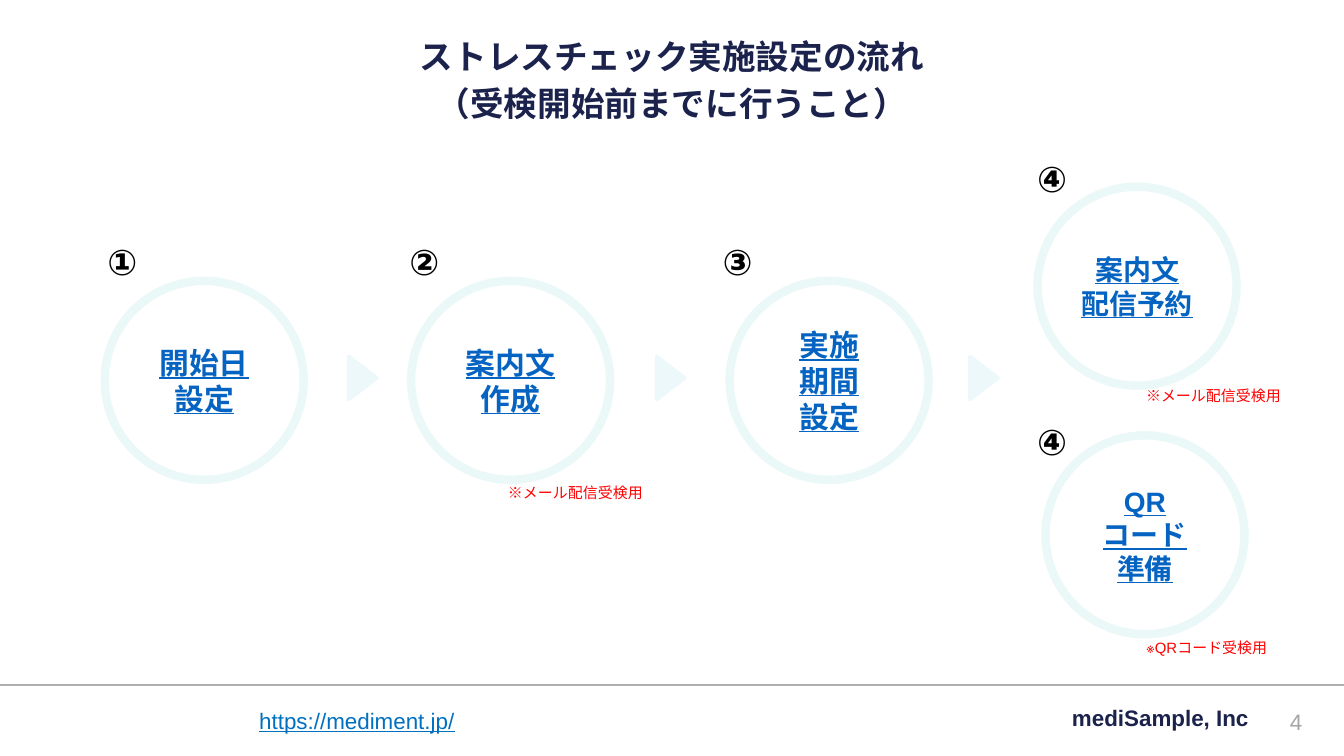
from dataclasses import dataclass

from lxml.etree import SubElement
from pptx import Presentation
from pptx.dml.color import RGBColor
from pptx.enum.shapes import MSO_CONNECTOR, MSO_SHAPE
from pptx.enum.text import MSO_ANCHOR, PP_ALIGN
from pptx.oxml.ns import qn
from pptx.util import Cm, Pt

FONT = "Arial"
NAVY, BLUE, RED = "1B224C", "0563C1", "FF0000"
RING, ARROW = "EBF8F8", "EDF8FA"
DIAMETER = 3.76


@dataclass
class Step:
    number: str
    text: str
    left: float
    top: float
    number_left: float
    number_top: float
    size: int = 16
    grouped: bool = True


@dataclass
class Label:
    text: str
    left: float
    top: float
    width: float
    height: float
    size: int
    color: str
    bold: bool = False
    underline: bool = False
    align: PP_ALIGN = PP_ALIGN.LEFT
    anchor: MSO_ANCHOR = MSO_ANCHOR.TOP
    inset: float = 0.1
    wrap: bool = True


STEPS = [
    Step("①", "開始日\n設定", 1.98, 5.31, 1.78, 4.29),
    Step("②", "案内文\n作成", 7.77, 5.31, 7.49, 4.29),
    Step("③", "実施\n期間\n設定", 13.79, 5.31, 13.41, 4.29),
    Step("④", "案内文\n配信予約", 19.61, 3.53, 19.35, 2.72, 15, False),
    Step("④", "QR\nコード\n準備", 19.76, 8.23, 19.35, 7.7, 15, False),
]

NOTES = [
    ("※メール配信受検用", 9.35, 8.97, 3.3),
    ("※メール配信受検用", 21.41, 7.14, 3.1),
    ("※QRコード受検用", 21.41, 11.91, 2.92),
]

TITLE = Label("ストレスチェック実施設定の流れ\n（受検開始前までに行うこと）", 1.7, 1.17, 22, 0.76,
              18, NAVY, bold=True, align=PP_ALIGN.CENTER, anchor=MSO_ANCHOR.MIDDLE)

FOOTER = [
    Label("mediSample, Inc", 17.7, 13.18, 6, 0.76, 12, NAVY, bold=True,
          align=PP_ALIGN.RIGHT, anchor=MSO_ANCHOR.MIDDLE),
    Label("https://mediment.jp/", 4.8, 13.26, 5.21, 0.71, 12, "0070C0", underline=True),
    Label("4", 24, 13.26, 0.99, 0.76, 12, "A5A5A5",
          align=PP_ALIGN.CENTER, anchor=MSO_ANCHOR.MIDDLE),
]


def rgb(value: str) -> RGBColor:
    return RGBColor.from_string(value)


def format_text(tf, size: int, color: str, bold: bool, underline: bool, align: PP_ALIGN) -> None:
    for p in tf.paragraphs:
        p.alignment = align
        for r in p.runs:
            r.font.size = Pt(size)
            r.font.bold = bold
            r.font.underline = underline
            r.font.color.rgb = rgb(color)
            r.font.name = FONT
            SubElement(r.font._element, qn("a:ea")).set("typeface", FONT)


def add_label(shapes, label: Label):
    sp = shapes.add_textbox(Cm(label.left), Cm(label.top), Cm(label.width), Cm(label.height))
    tf = sp.text_frame
    tf.word_wrap = label.wrap
    tf.vertical_anchor = label.anchor
    tf.margin_left = tf.margin_right = tf.margin_top = tf.margin_bottom = Cm(label.inset)
    tf.text = label.text
    format_text(tf, label.size, label.color, label.bold, label.underline, label.align)
    return tf


def add_preset(shapes, kind: MSO_SHAPE, left: float, top: float, width: float, height: float,
               fill: str, line: str, weight: float):
    sp = shapes.add_shape(kind, Cm(left), Cm(top), Cm(width), Cm(height))
    sp.shadow.inherit = False
    sp.fill.solid()
    sp.fill.fore_color.rgb = rgb(fill)
    sp.line.color.rgb = rgb(line)
    sp.line.width = Pt(weight)
    return sp


def add_step(s, step: Step) -> None:
    shapes = s.shapes.add_group_shape().shapes if step.grouped else s.shapes
    sp = add_preset(shapes, MSO_SHAPE.OVAL, step.left, step.top, DIAMETER, DIAMETER,
                    "FFFFFF", RING, 4.5)
    tf = sp.text_frame
    tf.vertical_anchor = MSO_ANCHOR.MIDDLE
    tf.text = step.text
    format_text(tf, step.size, BLUE, True, True, PP_ALIGN.CENTER)
    add_label(shapes, Label(step.number, step.number_left, step.number_top, 1.19, 1.32,
                            19, "000000", bold=True, inset=0.25, wrap=False))


def main() -> None:
    prs = Presentation()
    prs.slide_width, prs.slide_height = Cm(25.4), Cm(14.29)
    s = prs.slides.add_slide(prs.slide_layouts[6])

    # Footer
    rule = s.shapes.add_connector(MSO_CONNECTOR.STRAIGHT, 0, Cm(12.95), prs.slide_width, Cm(12.95))
    rule.line.color.rgb = rgb("AFAFAF")
    rule.line.width = Pt(0.75)
    SubElement(rule._element.spPr, qn("a:effectLst"))
    for label in FOOTER:
        add_label(s.shapes, label)

    # Title
    tf = add_label(s.shapes, TITLE)
    for p, spacing in zip(tf.paragraphs, (0.9, 1.15)):
        p.line_spacing = spacing

    # Arrows between steps
    for left in (6.45, 12.27, 18.19):
        sp = add_preset(s.shapes, MSO_SHAPE.ISOSCELES_TRIANGLE, left, 6.88, 0.81, 0.53,
                        ARROW, ARROW, 2)
        sp.rotation = 90

    # Numbered steps
    for step in STEPS:
        add_step(s, step)

    # Red notes
    for text, left, top, width in NOTES:
        add_label(s.shapes, Label(text, left, top, width, 0.81, 8, RED, inset=0.25, wrap=False))

    prs.save("out.pptx")


if __name__ == "__main__":
    main()
